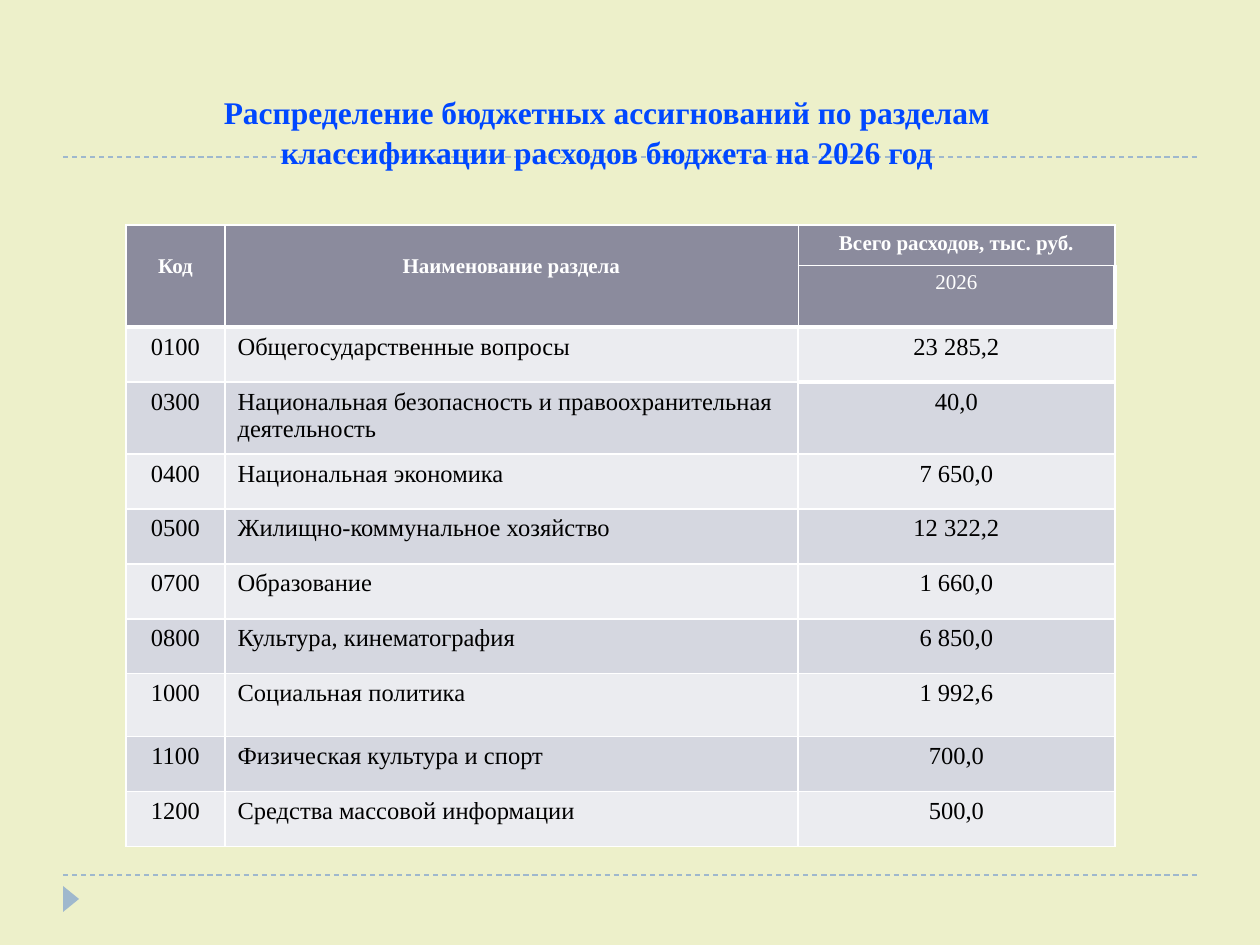
from lxml.etree import SubElement as Sub
from pptx import Presentation
from pptx.dml.color import RGBColor as RGB
from pptx.enum.dml import MSO_LINE as Dash
from pptx.enum.shapes import MSO_CONNECTOR as Conn, MSO_SHAPE as Kind
from pptx.enum.text import MSO_ANCHOR as Anchor, PP_ALIGN as Align
from pptx.oxml.ns import qn
from pptx.util import Pt

HUES = {"back": "EDF0CA", "rule": "9FB8CD", "title": "0047FF", "head": "8B8B9D",
        "light": "EBECF0", "dark": "D5D7E0", "white": "FFFFFF", "black": "000000"}
ROWS = [
    ("0100", "Общегосударственные вопросы", "23 285,2"),
    ("0300", "Национальная безопасность и правоохранительная деятельность", "40,0"),
    ("0400", "Национальная экономика", "7 650,0"),
    ("0500", "Жилищно-коммунальное хозяйство", "12 322,2"),
    ("0700", "Образование", "1 660,0"),
    ("0800", "Культура, кинематография", "6 850,0"),
    ("1000", "Социальная политика", "1 992,6"),
    ("1100", "Физическая культура и спорт", "700,0"),
    ("1200", "Средства массовой информации", "500,0"),
]
HEAD = [("Код", "Наименование раздела", "Всего расходов, тыс. руб."), ("", "", "2026")]
WIDE = [99, 573, 317]
HIGH = [40, 62, 55, 72, 55, 55, 55, 55, 63, 55, 55]


def px(*nums):
    return [round(n * 914400 / 126) for n in nums]


def hue(name):
    return RGB.from_string(HUES[name])


def write(frame, text, size=14, color="black", bold=False, align=Align.CENTER, gap=None):
    para = frame.paragraphs[0]
    para.alignment = align
    para.line_spacing = gap
    run = para.add_run()
    run.text = text
    font = run.font
    font.name, font.size, font.bold = "Times New Roman", Pt(size), bold
    font.color.rgb = hue(color)


class Deck:
    """Holds the style and the current slide."""

    def __init__(self):
        self.show = Presentation()
        self.show.slide_width, self.show.slide_height = px(1260, 945)
        self.slide = self.show.slides.add_slide(self.show.slide_layouts[5])
        self.shapes = self.slide.shapes
        fill = self.slide.background.fill
        fill.solid()
        fill.fore_color.rgb = hue("back")

    def rule(self, y):
        line = self.shapes.add_connector(Conn.STRAIGHT, *px(63, y, 1197, y))
        line.line.color.rgb = hue("rule")
        line.line.width = Pt(0.75)
        line.line.dash_style = Dash.DASH
        Sub(line._element.spPr, qn("a:effectLst"))

    def mark(self, *box):
        mark = self.shapes.add_shape(Kind.ISOSCELES_TRIANGLE, *px(*box))
        mark.rotation = 90
        mark.shadow.inherit = False
        mark.fill.solid()
        mark.fill.fore_color.rgb = hue("rule")
        mark.line.fill.background()

    def title(self, text, *box):
        head = self.shapes.title
        head.left, head.top, head.width, head.height = px(*box)
        frame = head.text_frame
        frame.word_wrap = True
        frame.vertical_anchor = Anchor.MIDDLE
        write(frame, text, size=18, color="title", bold=True, gap=1.05)
        self.shapes._spTree.append(head._element)

    def edge(self, cell, **sides):
        props = cell._tc.get_or_add_tcPr()
        for side in "LRTB":
            width = Pt(sides.get(side, 1))
            line = Sub(props, qn("a:ln" + side), w=str(width))
            Sub(Sub(line, qn("a:solidFill")), qn("a:srgbClr"), val=HUES["white"])

    def paint(self, cell, color):
        cell.fill.solid()
        cell.fill.fore_color.rgb = hue(color)

    def table(self, left, top):
        data = HEAD + ROWS
        size = px(left, top, sum(WIDE), sum(HIGH))
        grid = self.shapes.add_table(len(data), len(WIDE), *size).table
        for col, wide in zip(grid.columns, px(*WIDE)):
            col.width = wide
        for row, high in zip(grid.rows, px(*HIGH)):
            row.height = high
        for y, row in enumerate(data):
            for x, text in enumerate(row):
                cell = grid.cell(y, x)
                if y < len(HEAD):
                    self.head(cell, text, x, y)
                else:
                    self.body(cell, text, x, y)
        for x in range(2):
            grid.cell(0, x).merge(grid.cell(1, x))
            grid.cell(0, x).margin_top = px(30)[0]

    def head(self, cell, text, x, y):
        last = x == 2
        self.edge(cell, L=0.25 if last else 1,
                  R=3 if last and y else 0.25 if x == 1 else 1,
                  T=0.25 if last and y else 1,
                  B=0.25 if last and not y else 3)
        self.paint(cell, "head")
        if text:
            write(cell.text_frame, text, size=12, color="white", bold=y == 0)

    def body(self, cell, text, x, y):
        self.edge(cell, T=3 if y == 2 else 1, B=3 if (x, y) == (2, 2) else 1)
        self.paint(cell, "dark" if y % 2 else "light")
        write(cell.text_frame, text, align=Align.LEFT if x == 1 else Align.CENTER)


def main():
    deck = Deck()
    for y in (157, 875):
        deck.rule(y)
    deck.mark(58, 891, 26, 16)
    deck.table(126, 225)
    deck.title("Распределение бюджетных ассигнований по разделам "
               "классификации расходов бюджета на 2026 год", 116, 86, 982, 90)
    deck.show.save("out.pptx")


if __name__ == "__main__":
    main()
